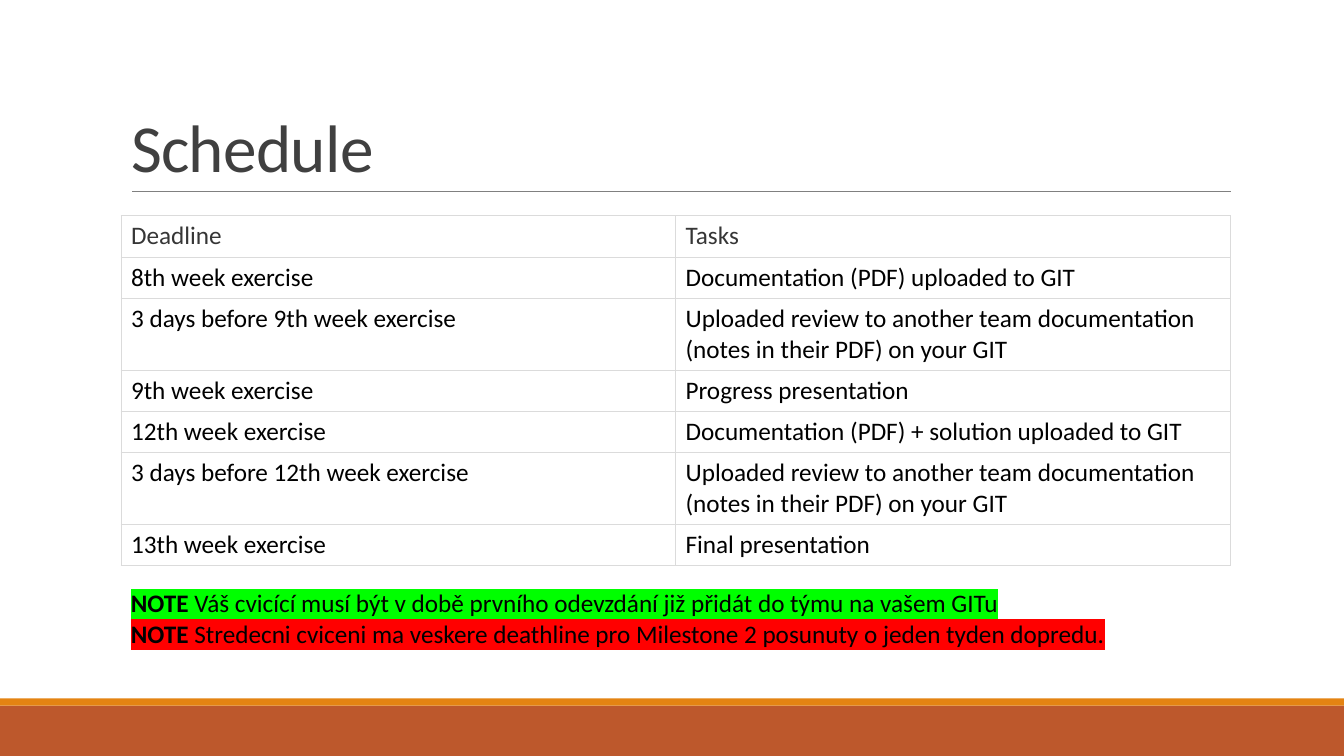
import pptx
import pptx.util
import pptx.dml.color
import pptx.enum.shapes
import pptx.enum.text
import pptx.oxml
import pptx.oxml.ns

WIDE, HIGH = 13.33, 7.5
LEFT, SPAN = 1.2, 11
ROW = 0.41
FONT = "Calibri"
COLORS = {
    "title": "404040", "head": "363636", "text": "000000",
    "paper": "FFFFFF", "grid": "DBDBDB", "rule": "808080",
    "rust": "BD582C", "amber": "E48312", "green": "00FF00", "red": "FF0000",
}
REVIEW = "Uploaded review to another team documentation (notes in their PDF) on your GIT"
PLAN = [
    ("Deadline", "Tasks"),
    ("8th week exercise", "Documentation (PDF) uploaded to GIT"),
    ("3 days before 9th week exercise", REVIEW),
    ("9th week exercise", "Progress presentation"),
    ("12th week exercise", "Documentation (PDF) + solution uploaded to GIT"),
    ("3 days before 12th week exercise", REVIEW),
    ("13th week exercise", "Final presentation"),
]
NOTES = [
    ("green", " Váš cvicící musí být v době prvního odevzdání již přidát do týmu na vašem GITu"),
    ("red", " Stredecni cviceni ma veskere deathline pro Milestone 2 posunuty o jeden tyden dopredu."),
]


def inch(*sizes):
    return [pptx.util.Inches(size) for size in sizes]


def tint(name):
    return pptx.dml.color.RGBColor.from_string(COLORS[name])


def node(text):
    return pptx.oxml.parse_xml(text.replace(">", f" {pptx.oxml.ns.nsdecls('a')}>", 1))


def style(para, size, color):
    para.font.name = FONT
    para.font.size = pptx.util.Pt(size)
    para.font.color.rgb = tint(color)


def add_band(slide, top, tall, color):
    kind = pptx.enum.shapes.MSO_SHAPE.RECTANGLE
    band = slide.shapes.add_shape(kind, *inch(0, top, WIDE, tall))
    band.shadow.inherit = False
    band.fill.solid()
    band.fill.fore_color.rgb = tint(color)
    band.line.fill.background()


def add_rule(slide, left, right, top):
    kind = pptx.enum.shapes.MSO_CONNECTOR.STRAIGHT
    rule = slide.shapes.add_connector(kind, *inch(left, top, right, top))
    rule.line.color.rgb = tint("rule")
    rule.line.width = pptx.util.Pt(0.5)
    rule._element.spPr.append(node("<a:effectLst></a:effectLst>"))


def set_title(slide, text):
    title = slide.shapes.title
    title.left, title.top, title.width, title.height = inch(LEFT, 0.31, SPAN, 1.59)
    frame = title.text_frame
    frame.text = text
    frame.vertical_anchor = pptx.enum.text.MSO_ANCHOR.BOTTOM
    para = frame.paragraphs[0]
    para.alignment = pptx.enum.text.PP_ALIGN.LEFT
    para.line_spacing = 0.85
    style(para, 48, "title")
    para.runs[0].font._element.set("spc", "-50")


def add_edges(cell):
    props = cell._tc.get_or_add_tcPr()
    for place, side in enumerate(("lnL", "lnR", "lnT", "lnB")):
        edge = node(
            f'<a:{side} w="7620"><a:solidFill><a:srgbClr val="{COLORS["grid"]}"/>'
            f"</a:solidFill></a:{side}>"
        )
        props.insert(place, edge)


def add_plan(slide, plan):
    count, wide = len(plan), len(plan[0])
    frame = slide.shapes.add_table(count, wide, *inch(LEFT, 2.14, SPAN, count * ROW))
    table = frame.table
    table.first_row = table.horz_banding = False
    for line, texts in enumerate(plan):
        for col, text in enumerate(texts):
            cell = table.cell(line, col)
            cell.text = text
            cell.fill.solid()
            cell.fill.fore_color.rgb = tint("paper")
            style(cell.text_frame.paragraphs[0], 18, "text" if line else "head")
            add_edges(cell)


def add_notes(slide, notes):
    frame = slide.shapes.add_textbox(*inch(LEFT, 5.78, SPAN, 0.71)).text_frame
    frame.word_wrap = True
    for line, (color, text) in enumerate(notes):
        para = frame.add_paragraph() if line else frame.paragraphs[0]
        style(para, 18, "text")
        for part, bold in (("NOTE", True), (text, False)):
            run = para.add_run()
            run.text = part
            run.font.bold = bold
            mark = f'<a:highlight><a:srgbClr val="{COLORS[color]}"/></a:highlight>'
            run.font._element.append(node(mark))


def main():
    deck = pptx.Presentation()
    deck.slide_width, deck.slide_height = inch(WIDE, HIGH)
    slide = deck.slides.add_slide(deck.slide_layouts.get_by_name("Title Only"))
    add_band(slide, HIGH - 0.5, 0.5, "rust")
    add_band(slide, HIGH - 0.57, 0.07, "amber")
    add_rule(slide, 1.31, 12.21, 1.9)
    set_title(slide, "Schedule")
    add_plan(slide, PLAN)
    add_notes(slide, NOTES)
    deck.save("out.pptx")


if __name__ == "__main__":
    main()
